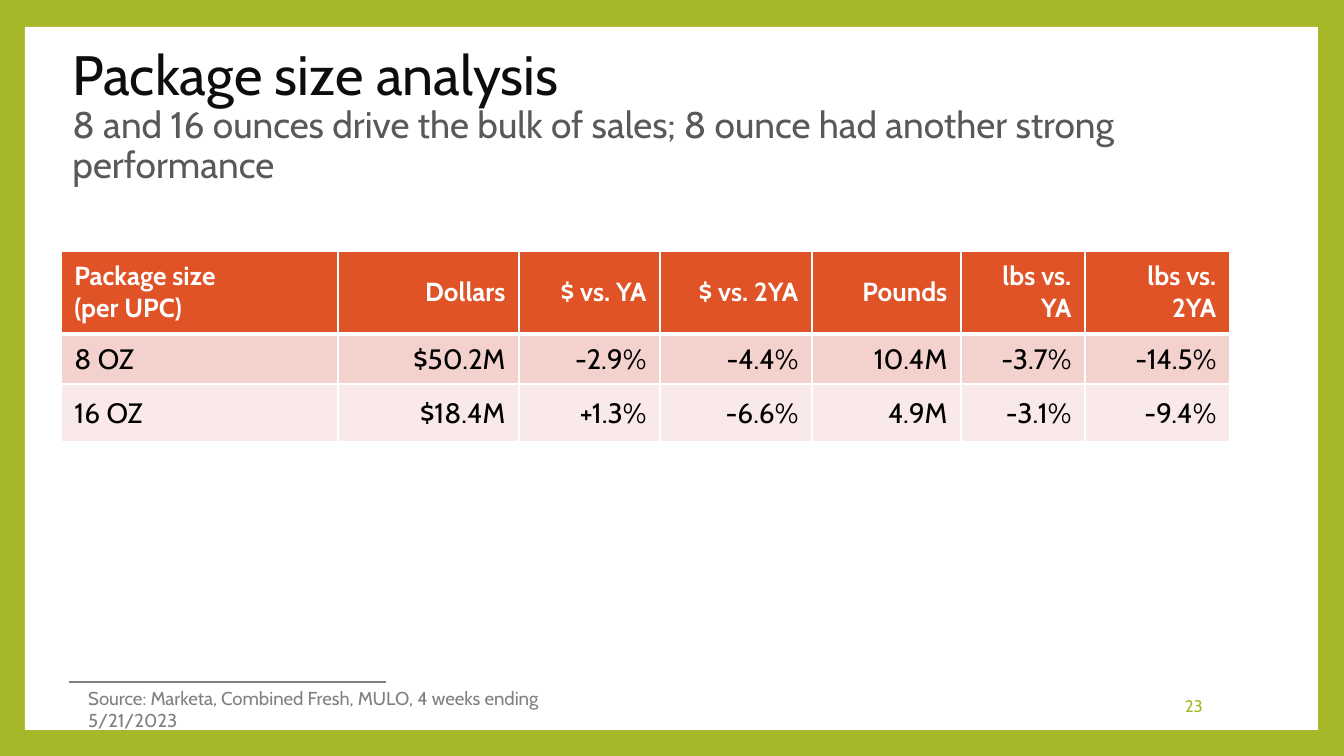
from copy import deepcopy

from lxml import etree
from pptx import Presentation
from pptx import util as u
from pptx.dml.color import RGBColor
from pptx.enum import shapes, text
from pptx.oxml import ns

PX = 9144000 / 1344
GREEN = RGBColor(0xA6, 0xB7, 0x27)
ORANGE = RGBColor(0xDF, 0x53, 0x27)
ROSE = RGBColor(0xF3, 0xD1, 0xCD)
PALE_ROSE = RGBColor(0xF9, 0xE9, 0xE8)
WHITE = RGBColor(0xFF, 0xFF, 0xFF)
BLACK = RGBColor(0, 0, 0)
INK = RGBColor(0x0D, 0x0D, 0x0D)
SLATE = RGBColor(0x59, 0x59, 0x59)
GRAY = RGBColor(0x80, 0x80, 0x80)


def px(*lengths):
    return [u.Emu(round(length * PX)) for length in lengths]


def write(frame, words, size, color, bold=False, align=text.PP_ALIGN.LEFT,
          anchor=text.MSO_ANCHOR.MIDDLE, spacing=None):
    frame.word_wrap = True
    frame.vertical_anchor = anchor
    paragraph = frame.paragraphs[0]
    paragraph.alignment = align
    paragraph.line_spacing = spacing
    for number, line in enumerate(words.split("\n")):
        if number:
            paragraph.add_line_break()
            paragraph._p[-1].append(deepcopy(run.font._rPr))
        if line:
            run = paragraph.add_run()
            run.text = line
            run.font.name = "Cabin"
            run.font.size = u.Pt(size)
            run.font.bold = bold
            run.font.color.rgb = color


deck = Presentation()
deck.slide_width, deck.slide_height = px(1344, 756)
slide = deck.slides.add_slide(deck.slide_layouts[5])
slide.background.fill.solid()
slide.background.fill.fore_color.rgb = GREEN

panel = slide.shapes.add_shape(shapes.MSO_SHAPE.RECTANGLE, *px(25, 27, 1293, 703))
panel.shadow.inherit = False
panel.fill.solid()
panel.fill.fore_color.rgb = WHITE
panel.line.fill.background()

source_rule = slide.shapes.add_connector(
    shapes.MSO_CONNECTOR.STRAIGHT, *px(69, 682, 386, 682))
source_rule.line.color.rgb = GRAY
source_rule.line.width = u.Pt(0.79)
etree.SubElement(source_rule._element.spPr, ns.qn("a:effectLst"))

page_number = slide.shapes.add_textbox(*px(1028, 686, 188, 40))
write(page_number.text_frame, "23", 9, GREEN, align=text.PP_ALIGN.RIGHT)

source = slide.shapes.add_textbox(*px(75, 680, 554, 36))
write(source.text_frame,
      "Source: Marketa, Combined Fresh, MULO, 4 weeks ending 5/21/2023",
      10, GRAY, anchor=text.MSO_ANCHOR.TOP)

column_widths = px(277, 181, 141, 152, 149, 124, 145)
row_heights = px(83, 50, 58)
sales = [
    ["Package size\n(per UPC)", "Dollars", "$ vs. YA", "$ vs. 2YA",
     "Pounds", "lbs vs. YA", "lbs vs. 2YA"],
    ["8 OZ", "$50.2M", "-2.9%", "-4.4%", "10.4M", "-3.7%", "-14.5%"],
    ["16 OZ", "$18.4M", "+1.3%", "-6.6%", "4.9M", "-3.1%", "-9.4%"],
]
row_fills = [ORANGE, ROSE, PALE_ROSE]
package_sizes = slide.shapes.add_table(
    len(sales), len(column_widths), *px(61, 251),
    sum(column_widths), sum(row_heights)).table
for column, width in zip(package_sizes.columns, column_widths):
    column.width = width
for row, height in zip(package_sizes.rows, row_heights):
    row.height = height

for r, values in enumerate(sales):
    header = r == 0
    for c, value in enumerate(values):
        cell = package_sizes.cell(r, c)
        write(cell.text_frame, value, 14 if header else 15,
              WHITE if header else BLACK, bold=header,
              align=text.PP_ALIGN.RIGHT if c else text.PP_ALIGN.LEFT)
        cell.vertical_anchor = text.MSO_ANCHOR.MIDDLE
        if not header:
            cell.margin_top, cell.margin_bottom = px(1, 0)
        properties = cell._tc.get_or_add_tcPr()
        for side in "LRTB":
            heavy = (header and side == "B") or (r == 1 and side == "T")
            border = etree.SubElement(properties, ns.qn(f"a:ln{side}"),
                                      w=str(u.Pt(3 if heavy else 1)))
            paint = etree.SubElement(border, ns.qn("a:solidFill"))
            etree.SubElement(paint, ns.qn("a:srgbClr"), val=str(WHITE))
        cell.fill.solid()
        cell.fill.fore_color.rgb = row_fills[r]

title = slide.shapes.title
title.left, title.top, title.width, title.height = px(59, 46, 1146, 142)
write(title.text_frame, "Package size analysis\n", 29.7, INK, spacing=0.9)
write(title.text_frame,
      "8 and 16 ounces drive the bulk of sales; 8 ounce had another strong performance",
      19.8, SLATE, spacing=0.9)
slide.shapes._spTree.append(title._element)

deck.save("out.pptx")
